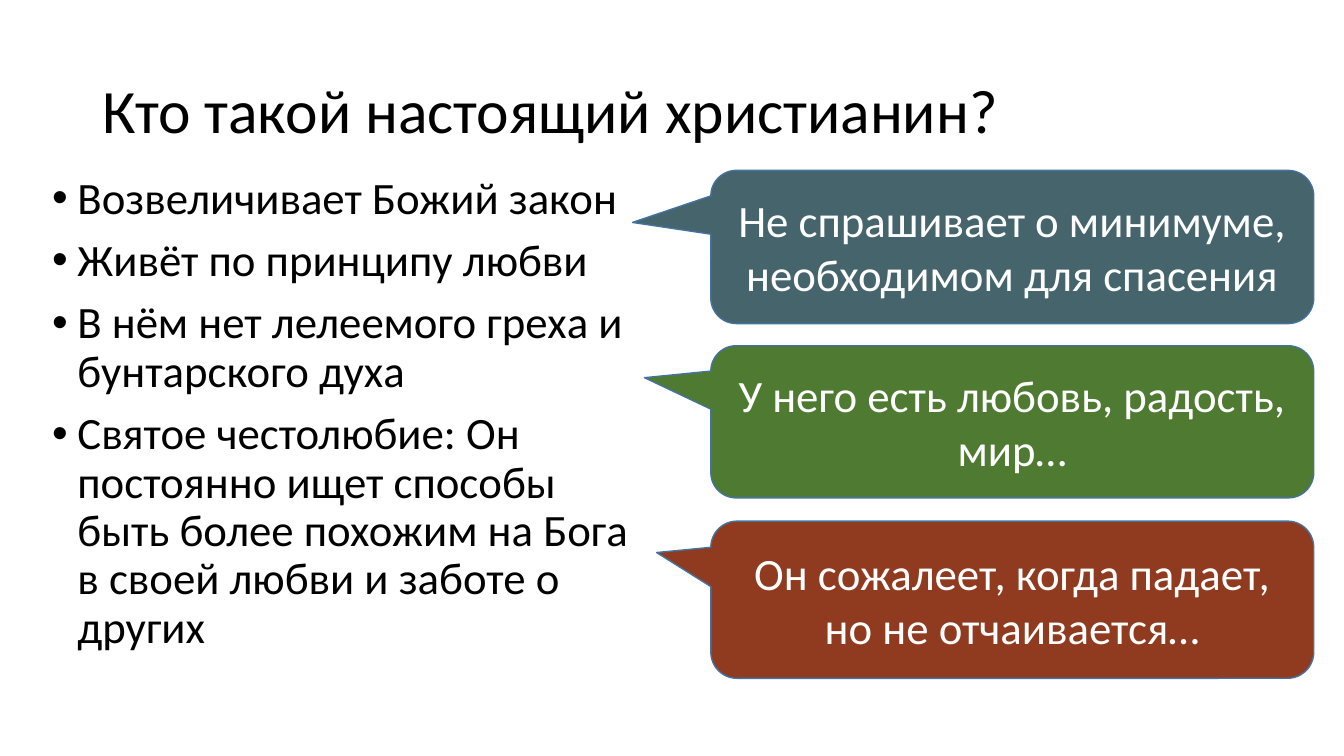
from lxml import etree
from pptx import Presentation
from pptx.dml.color import RGBColor
from pptx.enum.shapes import MSO_SHAPE
from pptx.enum.text import MSO_ANCHOR, PP_ALIGN
from pptx.oxml.ns import qn
from pptx.util import Inches, Pt

CALLOUT = MSO_SHAPE.ROUNDED_RECTANGULAR_CALLOUT
MIDDLE, TOP = MSO_ANCHOR.MIDDLE, MSO_ANCHOR.TOP
LEFT, CENTER = PP_ALIGN.LEFT, PP_ALIGN.CENTER
WIDE, HIGH = 13.33, 7.5
FONT = "Calibri"
COLORS = {
    "ink": "000000",
    "paper": "FFFFFF",
    "edge": "43739E",
    "slate": "45646B",
    "green": "4F7A32",
    "rust": "903B20",
}
TITLE = "Кто такой настоящий христианин?"
TRAITS = [
    "Возвеличивает Божий закон",
    "Живёт по принципу любви",
    "В нём нет лелеемого греха и бунтарского духа",
    "Святое честолюбие: Он постоянно ищет способы быть более похожим "
    "на Бога в своей любви и заботе о других",
]
NOTES = [
    ("Не спрашивает о минимуме, необходимом для спасения", "slate", 1.52, (-0.63, -0.16)),
    ("У него есть любовь, радость, мир…", "green", 1.51, (-0.61, -0.29)),
    ("Он сожалеет, когда падает, но не отчаивается…", "rust", 1.56, (-0.59, -0.3)),
]
TITLE_BOX = (0.92, 0.4, 11.5, 1.45)
TRAIT_BOX = (0.42, 1.69, 6.16, 5.04)
NOTE_BOX = (7.05, 1.69, 5.98, 5.04)
PITCH = 1.74


def color(name):
    """Return the named colour."""
    return RGBColor.from_string(COLORS[name])


def write(frame, texts, size, ink, anchor, align):
    """Fill a text frame with one run per paragraph and return the paragraphs."""
    frame.word_wrap = True
    frame.vertical_anchor = anchor
    for i, text in enumerate(texts):
        para = frame.add_paragraph() if i else frame.paragraphs[0]
        para.alignment = align
        run = para.add_run()
        run.text = text
        run.font.name = FONT
        run.font.size = Pt(size)
        run.font.color.rgb = color(ink)
    return frame.paragraphs


def bullet(para):
    """Give a paragraph a hanging round bullet."""
    props = para._p.get_or_add_pPr()
    props.set("marL", str(Inches(0.25)))
    props.set("indent", str(Inches(-0.25)))
    etree.SubElement(props, qn("a:buFont")).set("typeface", "Arial")
    etree.SubElement(props, qn("a:buChar")).set("char", "•")


def add_title(slide, box):
    """Place the heading in its box."""
    frame = slide.shapes.add_textbox(*map(Inches, box)).text_frame
    para = write(frame, [TITLE], 44, "ink", MIDDLE, LEFT)[0]
    para.line_spacing = 0.9


def add_traits(slide, box):
    """Place the bulleted list of traits in its box."""
    frame = slide.shapes.add_textbox(*map(Inches, box)).text_frame
    for para in write(frame, TRAITS, 32, "ink", TOP, LEFT):
        para.line_spacing = 0.9
        para.space_before = Pt(10)
        bullet(para)


def add_notes(slide, box):
    """Stack the callouts at an equal pitch down the box."""
    left, top, width, _ = box
    for row, (text, fill, height, tip) in enumerate(NOTES):
        place = (left, top + row * PITCH, width, height)
        note = slide.shapes.add_shape(CALLOUT, *map(Inches, place))
        note.shadow.inherit = False
        note.adjustments[0], note.adjustments[1] = tip
        note.fill.solid()
        note.fill.fore_color.rgb = color(fill)
        note.line.color.rgb = color("edge")
        note.line.width = Pt(1)
        write(note.text_frame, [text], 32, "paper", MIDDLE, CENTER)


def main():
    """Build the slide and save it."""
    deck = Presentation()
    deck.slide_width, deck.slide_height = Inches(WIDE), Inches(HIGH)
    slide = deck.slides.add_slide(deck.slide_layouts[6])
    add_title(slide, TITLE_BOX)
    add_traits(slide, TRAIT_BOX)
    add_notes(slide, NOTE_BOX)
    deck.save("out.pptx")


if __name__ == "__main__":
    main()
